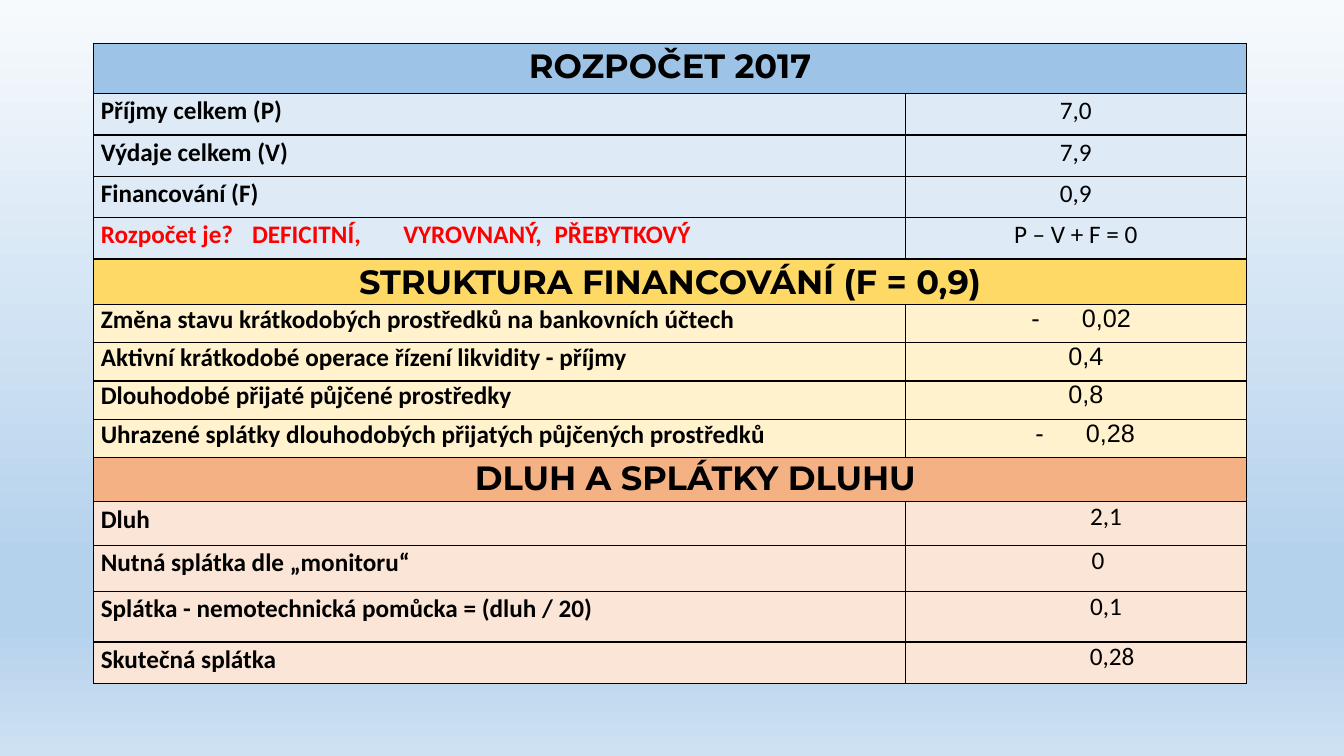
from dataclasses import dataclass

from lxml import etree
from pptx import Presentation
from pptx.dml.color import RGBColor
from pptx.enum.text import PP_ALIGN
from pptx.oxml.ns import qn
from pptx.table import Table, _Cell
from pptx.slide import Slide
from pptx.util import Inches, Pt

LEFT, CENTER = PP_ALIGN.LEFT, PP_ALIGN.CENTER
BLACK = RGBColor(0x00, 0x00, 0x00)
RED = RGBColor(0xFF, 0x00, 0x00)
BLUE, PALE_BLUE = RGBColor(0x9D, 0xC3, 0xE6), RGBColor(0xDE, 0xEB, 0xF7)
GOLD, PALE_GOLD = RGBColor(0xFF, 0xD9, 0x66), RGBColor(0xFF, 0xF2, 0xCC)
ORANGE, PALE_ORANGE = RGBColor(0xF4, 0xB1, 0x83), RGBColor(0xFB, 0xE5, 0xD6)
BACKGROUND_STOPS = (
    (0, RGBColor(0xF7, 0xFA, 0xFD)),
    (74, RGBColor(0xB5, 0xD2, 0xEC)),
    (83, RGBColor(0xB5, 0xD2, 0xEC)),
    (100, RGBColor(0xCE, 0xE1, 0xF2)),
)
COLUMN_WIDTHS = (8.05, 3.38)
WIDE_SPACING = 1.07


@dataclass(frozen=True)
class CellText:
    """Text of one cell; margin and tab stops are in inches."""
    text: str
    font: str = "Calibri"
    size: int = 18
    bold: bool = False
    color: RGBColor = BLACK
    align: PP_ALIGN = CENTER
    spacing: float = 1.0
    margin: float = 0.0
    tabs: tuple[float, ...] = ()


@dataclass(frozen=True)
class BudgetRow:
    height: float
    label: CellText
    value: CellText


@dataclass(frozen=True)
class Section:
    height: float
    heading: CellText
    heading_fill: RGBColor
    row_fill: RGBColor
    rows: tuple[BudgetRow, ...]


def heading(text: str, spacing: float = WIDE_SPACING, margin: float = 0.0) -> CellText:
    return CellText(text, "Montserrat", 24, True, spacing=spacing, margin=margin)


def label(text: str, spacing: float = WIDE_SPACING, color: RGBColor = BLACK,
          tabs: tuple[float, ...] = ()) -> CellText:
    return CellText(text, bold=True, color=color, align=LEFT, spacing=spacing, tabs=tabs)


def budget_row(text: str, value: str) -> BudgetRow:
    return BudgetRow(0.41, label(text), CellText(value, spacing=WIDE_SPACING))


def financing_row(text: str, value: str, margin: float = 0.2,
                  tabs: tuple[float, ...] = ()) -> BudgetRow:
    align = LEFT if tabs else CENTER
    return BudgetRow(0.38, label(text, 1.0),
                     CellText(value, "Arial", align=align, margin=margin, tabs=tabs))


def debt_row(height: float, text: str, value: str, margin: float) -> BudgetRow:
    return BudgetRow(height, label(text), CellText(value, margin=margin))


SECTIONS = (
    Section(0.5, heading("ROZPOČET 2017"), BLUE, PALE_BLUE, (
        budget_row("Příjmy celkem (P)", "7,0"),
        budget_row("Výdaje celkem (V)", "7,9"),
        budget_row("Financování (F)", "0,9"),
        BudgetRow(0.41,
                  label("Rozpočet je?\tDEFICITNÍ,\tVYROVNANÝ,\tPŘEBYTKOVÝ",
                        color=RED, tabs=(1.94, 3.25, 4.84)),
                  CellText("P – V + F = 0", spacing=WIDE_SPACING)),
    )),
    Section(0.45, heading("STRUKTURA FINANCOVÁNÍ (F = 0,9)"), GOLD, PALE_GOLD, (
        financing_row("Změna stavu krátkodobých prostředků na bankovních účtech",
                      "-\t0,02", 1.18, (1.54,)),
        financing_row("Aktivní krátkodobé operace řízení likvidity - příjmy", "0,4"),
        financing_row("Dlouhodobé přijaté půjčené prostředky", "0,8"),
        financing_row("Uhrazené splátky dlouhodobých přijatých půjčených prostředků",
                      "-\t0,28", 1.22, (1.51,)),
    )),
    Section(0.44, heading("DLUH A SPLÁTKY DLUHU", 1.0, 0.5), ORANGE, PALE_ORANGE, (
        debt_row(0.43, "Dluh", "2,1", 0.6),
        debt_row(0.46, "Nutná splátka dle „monitoru“", "0", 0.44),
        debt_row(0.5, "Splátka - nemotechnická pomůcka = (dluh / 20)", "0,1", 0.6),
        debt_row(0.41, "Skutečná splátka", "0,28", 0.72),
    )),
)


def add_solid_fill(parent: etree._Element, color: RGBColor) -> None:
    fill = etree.SubElement(parent, qn("a:solidFill"))
    etree.SubElement(fill, qn("a:srgbClr"), val=str(color))


def paint_background(slide: Slide) -> None:
    fill = slide.background.fill
    fill.gradient()
    fill.gradient_angle = 270
    stops = slide.element.find(".//" + qn("a:gsLst"))
    for stop in list(stops):
        stops.remove(stop)
    for percent, color in BACKGROUND_STOPS:
        stop = etree.SubElement(stops, qn("a:gs"), pos=str(percent * 1000))
        etree.SubElement(stop, qn("a:srgbClr"), val=str(color))


def style_cell(cell: _Cell, color: RGBColor) -> None:
    """Set the fill, insets and black borders."""
    cell.margin_left = cell.margin_right = Inches(0.07)
    cell.margin_top = cell.margin_bottom = 0
    cell.fill.solid()
    cell.fill.fore_color.rgb = color
    properties = cell._tc.get_or_add_tcPr()
    for position, side in enumerate(("a:lnL", "a:lnR", "a:lnT", "a:lnB")):
        border = etree.Element(qn(side), w=str(Pt(1)))
        add_solid_fill(border, BLACK)
        properties.insert(position, border)


def write_cell(cell: _Cell, content: CellText) -> None:
    cell.text_frame.text = content.text
    paragraph = cell.text_frame.paragraphs[0]
    paragraph.alignment = content.align
    paragraph.line_spacing = content.spacing
    properties = paragraph._p.get_or_add_pPr()
    properties.set("marL", str(Inches(content.margin)))
    properties.set("indent", "0")
    if content.tabs:
        tab_list = etree.SubElement(properties, qn("a:tabLst"))
        for stop in content.tabs:
            etree.SubElement(tab_list, qn("a:tab"), pos=str(Inches(stop)), algn="l")
    for run in paragraph.runs:
        run.font.name = content.font
        run.font.size = Pt(content.size)
        run.font.bold = content.bold
        run.font.color.rgb = content.color


def fill_section(table: Table, first_row: int, section: Section) -> int:
    """Write one section and return the index of the row after it."""
    table.rows[first_row].height = Inches(section.height)
    heading_cell, hidden_cell = table.rows[first_row].cells
    heading_cell.merge(hidden_cell)
    for cell in (heading_cell, hidden_cell):
        style_cell(cell, section.heading_fill)
    write_cell(heading_cell, section.heading)
    for index, row in enumerate(section.rows, first_row + 1):
        table.rows[index].height = Inches(row.height)
        for cell, content in zip(table.rows[index].cells, (row.label, row.value)):
            style_cell(cell, section.row_fill)
            write_cell(cell, content)
    return first_row + 1 + len(section.rows)


def main() -> None:
    presentation = Presentation()
    presentation.slide_width = Inches(13.33)
    presentation.slide_height = Inches(7.5)
    slide = presentation.slides.add_slide(presentation.slide_layouts[6])
    paint_background(slide)

    row_count = sum(1 + len(section.rows) for section in SECTIONS)
    table = slide.shapes.add_table(row_count, len(COLUMN_WIDTHS), Inches(0.93), Inches(0.43),
                                   Inches(sum(COLUMN_WIDTHS)), Inches(6.32)).table
    table.first_row = table.horz_banding = False
    for column, width in zip(table.columns, COLUMN_WIDTHS):
        column.width = Inches(width)
    next_row = 0
    for section in SECTIONS:
        next_row = fill_section(table, next_row, section)

    presentation.save("out.pptx")


if __name__ == "__main__":
    main()
